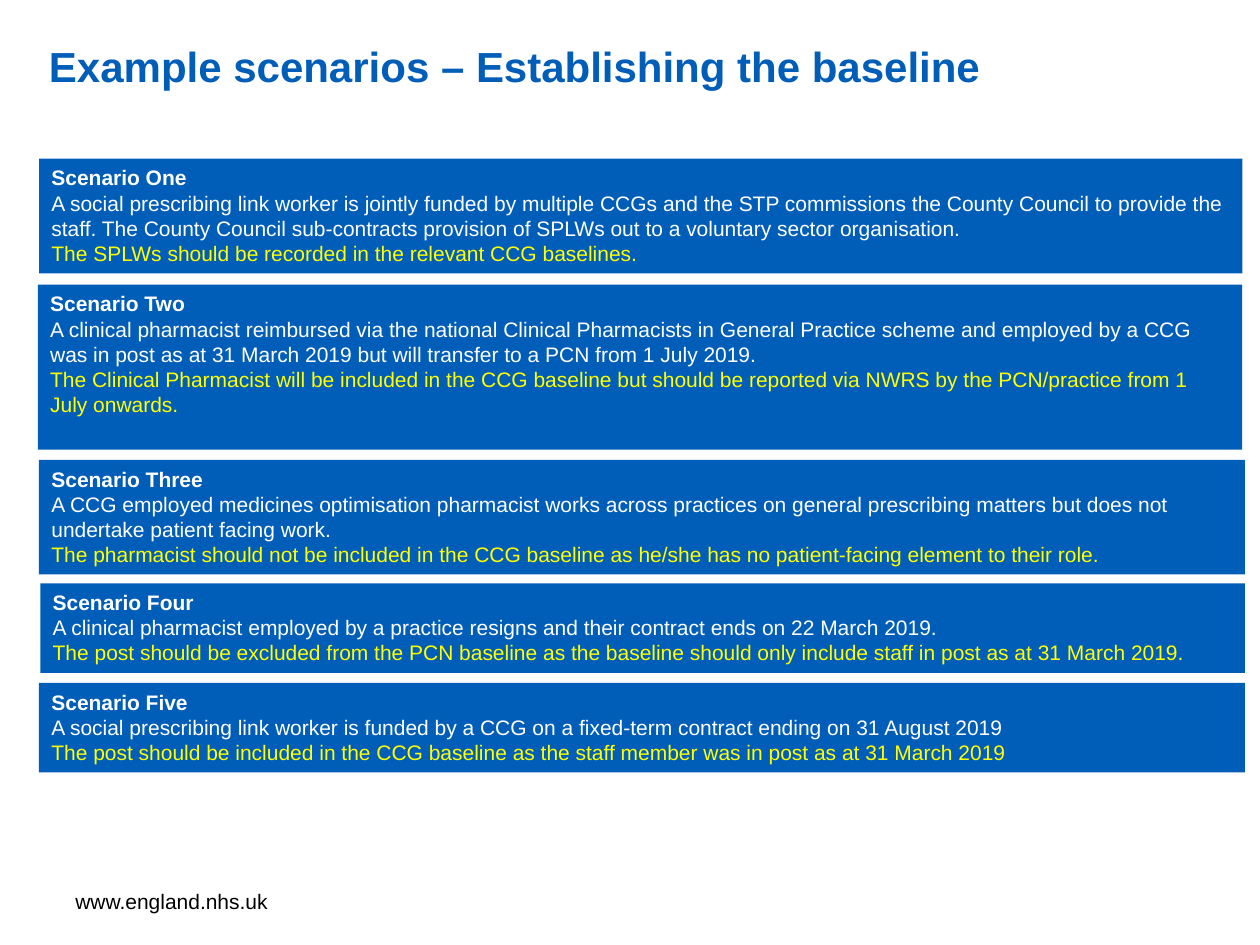
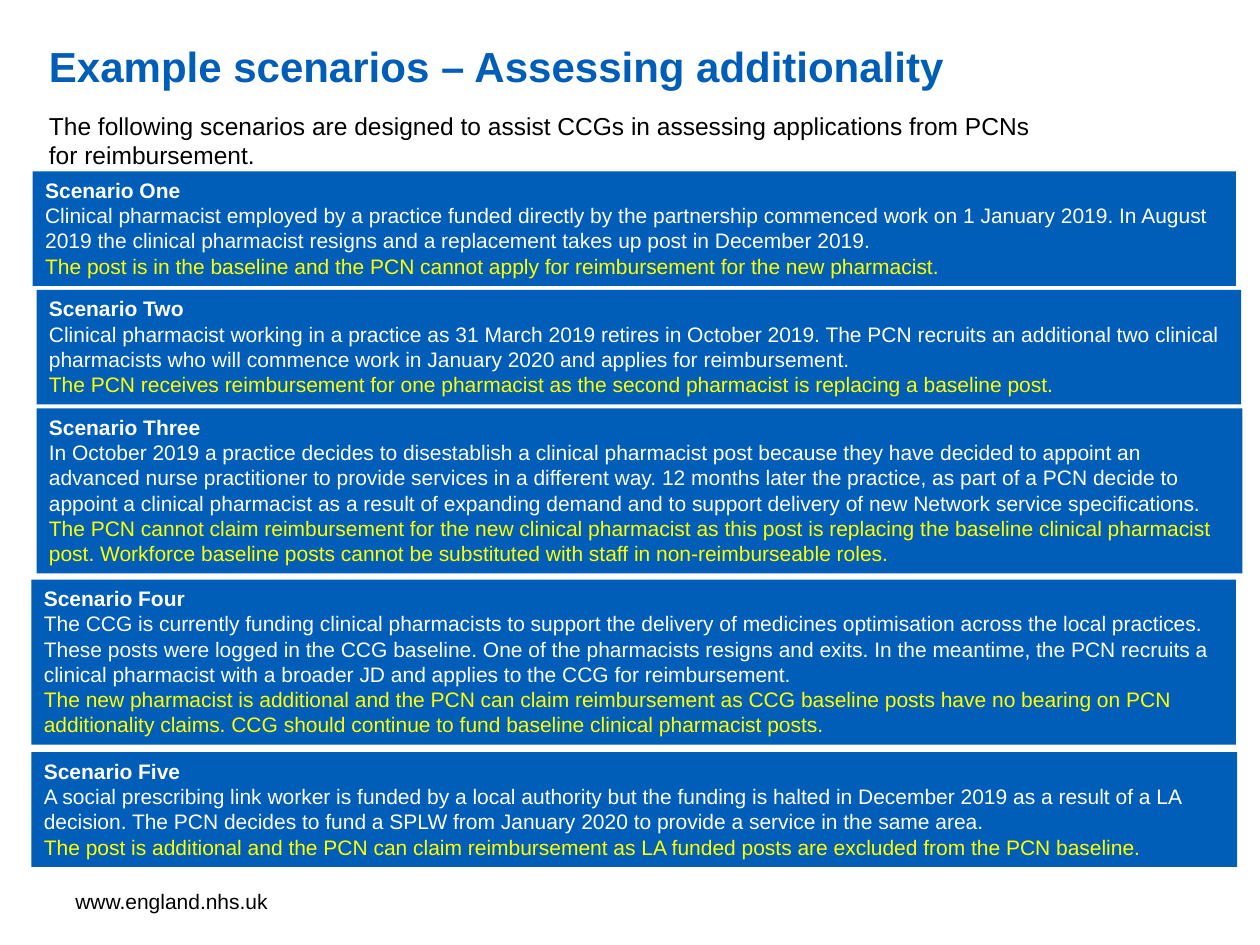
import pptx
import pptx.dml.color
import pptx.enum.shapes
import pptx.enum.text
import pptx.util

RGB = pptx.dml.color.RGBColor.from_string
ANCHOR = pptx.enum.text.MSO_ANCHOR
ALIGN = pptx.enum.text.PP_ALIGN


class Theme:
    font = "Arial"
    blue = RGB("005EB8")
    white = RGB("FFFFFF")
    yellow = RGB("FFFF00")
    black = RGB("000000")
    title = {"size": pptx.util.Pt(24), "bold": True, "color": blue}
    intro = {"size": pptx.util.Pt(14), "bold": False, "color": black}
    footer = {"size": pptx.util.Pt(12), "bold": False, "color": black}
    heading = {"size": pptx.util.Pt(12), "bold": True, "color": white}
    situation = {"size": pptx.util.Pt(12), "bold": False, "color": white}
    ruling = {"size": pptx.util.Pt(12), "bold": False, "color": yellow}


deck = pptx.Presentation()
deck.slide_width = pptx.util.Inches(10)
deck.slide_height = pptx.util.Inches(7.5)

# The page is a grid of 100 columns by 75 rows.
COLUMN = deck.slide_width / 100
ROW = deck.slide_height / 75
LINE_ROWS = 2
PADDING_ROWS = 1.1


def grid(left, top, width, height):
    """Turn columns and rows into slide lengths."""
    return [int(n * unit) for n, unit in zip((left, top, width, height), (COLUMN, ROW) * 2)]


def write(box, anchor, *paragraphs):
    """Fill a box with (text, style) paragraphs."""
    frame = box.text_frame
    frame.word_wrap = True
    frame.vertical_anchor = anchor
    for number, (text, style) in enumerate(paragraphs):
        para = frame.add_paragraph() if number else frame.paragraphs[0]
        para.alignment = ALIGN.LEFT
        span = para.add_run()
        span.text = text
        span.font.name = Theme.font
        for name, value in style.items():
            if name == "color":
                span.font.color.rgb = value
            else:
                setattr(span.font, name, value)


# Each scenario: left, top, width, lines of text it holds, name, situation, ruling.
PAGES = [
    {
        "title": "Example scenarios – Establishing the baseline",
        "intro": None,
        "scenarios": [
            (3.1, 12.6, 95.5, 4, "One",
             "A social prescribing link worker is jointly funded by multiple CCGs and the STP "
             "commissions the County Council to provide the staff. The County Council "
             "sub-contracts provision of SPLWs out to a voluntary sector organisation.",
             "The SPLWs should be recorded in the relevant CCG baselines."),
            (3.0, 22.6, 95.6, 6, "Two",
             "A clinical pharmacist reimbursed via the national Clinical Pharmacists in General "
             "Practice scheme and employed by a CCG was in post as at 31 March 2019 but will "
             "transfer to a PCN from 1 July 2019.",
             "The Clinical Pharmacist will be included in the CCG baseline but should be "
             "reported via NWRS by the PCN/practice from 1 July onwards."),
            (3.1, 36.5, 95.7, 4, "Three",
             "A CCG employed medicines optimisation pharmacist works across practices on general "
             "prescribing matters but does not undertake patient facing work.",
             "The pharmacist should not be included in the CCG baseline as he/she has no "
             "patient-facing element to their role."),
            (3.2, 46.3, 95.6, 3, "Four",
             "A clinical pharmacist employed by a practice resigns and their contract ends on "
             "22 March 2019.",
             "The post should be excluded from the PCN baseline as the baseline should only "
             "include staff in post as at 31 March 2019."),
            (3.1, 54.2, 95.7, 3, "Five",
             "A social prescribing link worker is funded by a CCG on a fixed-term contract "
             "ending on 31 August 2019",
             "The post should be included in the CCG baseline as the staff member was in post "
             "as at 31 March 2019"),
        ],
    },
    {
        "title": "Example scenarios – Assessing additionality",
        "intro": "The following scenarios are designed to assist CCGs in assessing applications "
                 "from PCNs for reimbursement.",
        "scenarios": [
            (2.6, 13.6, 95.5, 4, "One",
             "Clinical pharmacist employed by a practice funded directly by the partnership "
             "commenced work on 1 January 2019. In August 2019 the clinical pharmacist resigns "
             "and a replacement takes up post in December 2019.",
             "The post is in the baseline and the PCN cannot apply for reimbursement for the "
             "new pharmacist."),
            (2.9, 23.0, 95.6, 4, "Two",
             "Clinical pharmacist working in a practice as 31 March 2019 retires in October "
             "2019. The PCN recruits an additional two clinical pharmacists who will commence "
             "work in January 2020 and applies for reimbursement.",
             "The PCN receives reimbursement for one pharmacist as the second pharmacist is "
             "replacing a baseline post."),
            (2.9, 32.4, 95.7, 6, "Three",
             "In October 2019 a practice decides to disestablish a clinical pharmacist post "
             "because they have decided to appoint an advanced nurse practitioner to provide "
             "services in a different way. 12 months later the practice, as part of a PCN "
             "decide to appoint a clinical pharmacist as a result of expanding demand and to "
             "support delivery of new Network service specifications.",
             "The PCN cannot claim reimbursement for the new clinical pharmacist as this post "
             "is replacing the baseline clinical pharmacist post. Workforce baseline posts "
             "cannot be substituted with staff in non-reimburseable roles."),
            (2.5, 46.0, 95.6, 6, "Four",
             "The CCG is currently funding clinical pharmacists to support the delivery of "
             "medicines optimisation across the local practices. These posts were logged in "
             "the CCG baseline. One of the pharmacists resigns and exits. In the meantime, the "
             "PCN recruits a clinical pharmacist with a broader JD and applies to the CCG for "
             "reimbursement.",
             "The new pharmacist is additional and the PCN can claim reimbursement as CCG "
             "baseline posts have no bearing on PCN additionality claims. CCG should continue "
             "to fund baseline clinical pharmacist posts."),
            (2.5, 59.7, 95.7, 4, "Five",
             "A social prescribing link worker is funded by a local authority but the funding "
             "is halted in December 2019 as a result of a LA decision. The PCN decides to fund "
             "a SPLW from January 2020 to provide a service in the same area.",
             "The post is additional and the PCN can claim reimbursement as LA funded posts are "
             "excluded from the PCN baseline."),
        ],
    },
]

for content in PAGES:
    page = deck.slides.add_slide(deck.slide_layouts[6])
    footer = page.shapes.add_textbox(*grid(5, 69.5, 23.3, 4))
    write(footer, ANCHOR.MIDDLE, ("www.england.nhs.uk", Theme.footer))
    title = page.shapes.add_textbox(*grid(2.9, 2.1, 84.5, 6.2))
    write(title, ANCHOR.MIDDLE, (content["title"], Theme.title))
    if content["intro"]:
        intro = page.shapes.add_textbox(*grid(2.9, 8.3, 82, 5.7))
        write(intro, ANCHOR.TOP, (content["intro"], Theme.intro))

    for left, top, width, lines, name, situation, ruling in content["scenarios"]:
        height = lines * LINE_ROWS + PADDING_ROWS
        panel = page.shapes.add_shape(
            pptx.enum.shapes.MSO_SHAPE.RECTANGLE, *grid(left, top, width, height))
        panel.shadow.inherit = False
        panel.fill.solid()
        panel.fill.fore_color.rgb = Theme.blue
        panel.line.fill.background()
        write(panel, ANCHOR.TOP,
              (f"Scenario {name}", Theme.heading),
              (situation, Theme.situation),
              (ruling, Theme.ruling))

deck.save("out.pptx")
